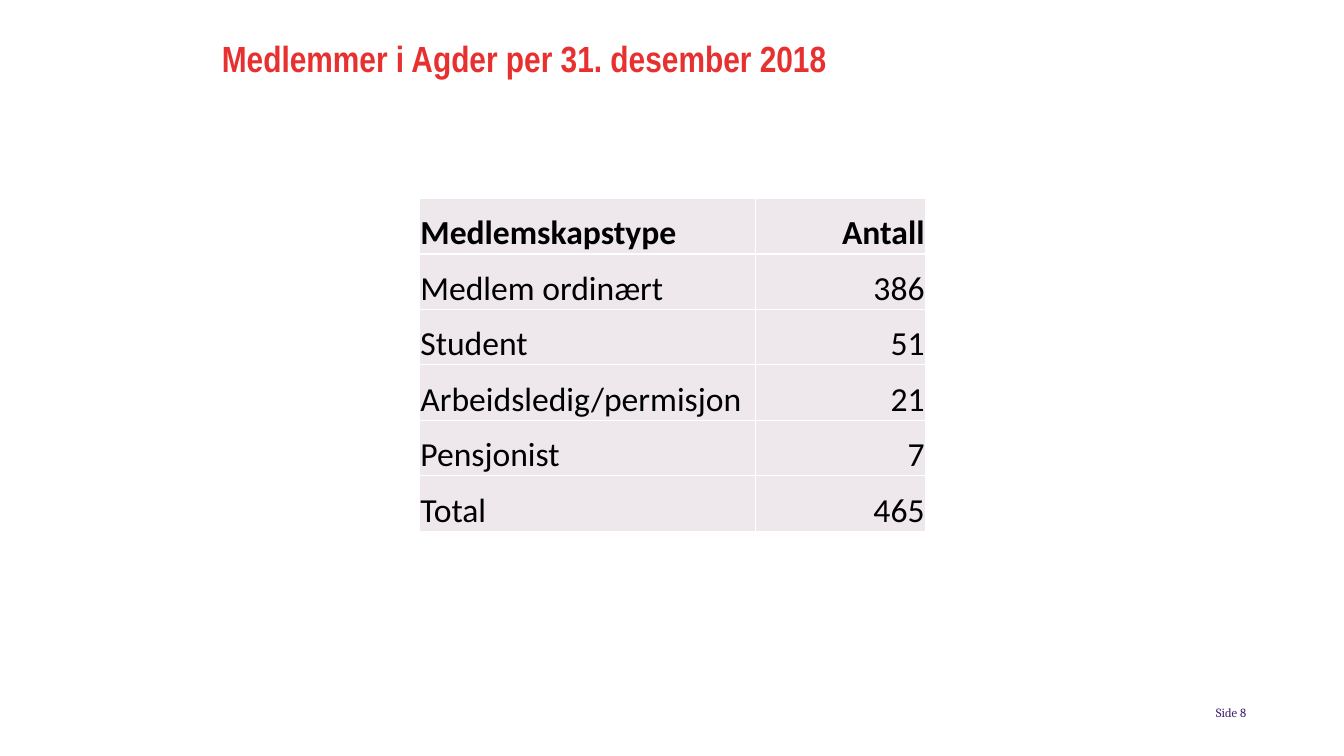
import lxml.etree
import pptx
import pptx.dml.color
import pptx.enum.text
import pptx.oxml.ns
import pptx.util

TITLE = "Medlemmer i Agder per 31. desember 2018"
PAGE_LABEL = "Side 8"
MEMBERS = [
    ("Medlemskapstype", "Antall"),
    ("Medlem ordinært", "386"),
    ("Student", "51"),
    ("Arbeidsledig/permisjon", "21"),
    ("Pensjonist", "7"),
    ("Total", "465"),
]
COLUMN_WIDTHS = (3.33, 1.69)
ROW_HEIGHT = 0.55
CELL_FILL = "EEE8ED"
BORDER = "FFFFFF"
TITLE_FONT = {"name": "Arial Narrow", "size": pptx.util.Pt(26), "bold": True}
LABEL_FONT = {"name": "Cambria", "size": pptx.util.Pt(9)}
TABLE_FONT = {"name": "Calibri", "size": pptx.util.Pt(24)}
ALIGN = pptx.enum.text.PP_ALIGN
ANCHOR = pptx.enum.text.MSO_ANCHOR
inches = pptx.util.Inches


def color(value):
    return pptx.dml.color.RGBColor.from_string(value)


def assign(target, values):
    for name, value in values.items():
        setattr(target, name, value)


def write(frame, text, font, shade, align):
    para = frame.paragraphs[0]
    para.alignment = align
    span = para.add_run()
    span.text = text
    assign(span.font, font)
    span.font.color.rgb = color(shade)
    return para


def margins(left, top, right, bottom):
    names = ("margin_left", "margin_top", "margin_right", "margin_bottom")
    return dict(zip(names, map(inches, (left, top, right, bottom))))


def add_borders(cell):
    properties = cell._tc.get_or_add_tcPr()
    qn = pptx.oxml.ns.qn
    for side in ("a:lnL", "a:lnR", "a:lnT", "a:lnB"):
        line = lxml.etree.SubElement(properties, qn(side), w=str(pptx.util.Pt(1)))
        fill = lxml.etree.SubElement(line, qn("a:solidFill"))
        lxml.etree.SubElement(fill, qn("a:srgbClr"), val=BORDER)


def add_title(page):
    title = page.shapes.title
    assign(title, dict(left=inches(2.2), top=inches(0.39), width=inches(7.48), height=inches(0.81)))
    frame = title.text_frame
    assign(frame, margins(0, 0, 0, 0))
    assign(frame, {"word_wrap": True, "vertical_anchor": ANCHOR.TOP,
                   "auto_size": pptx.enum.text.MSO_AUTO_SIZE.NONE})
    para = write(frame, TITLE, TITLE_FONT, "E73130", ALIGN.LEFT)
    para.line_spacing = pptx.util.Pt(29)


def add_page_label(page):
    box = page.shapes.add_textbox(*map(inches, (9.36, 6.99, 3, 0.15)))
    assign(box.text_frame, margins(0, 0, 0, 0))
    assign(box.text_frame, {"word_wrap": True, "vertical_anchor": ANCHOR.MIDDLE})
    write(box.text_frame, PAGE_LABEL, LABEL_FONT, "3F1F71", ALIGN.RIGHT)


def add_members(page):
    size = (sum(COLUMN_WIDTHS), ROW_HEIGHT * len(MEMBERS))
    table = page.shapes.add_table(
        len(MEMBERS), len(COLUMN_WIDTHS), *map(inches, (4.16, 1.97, *size))).table
    for column, width in zip(table.columns, COLUMN_WIDTHS):
        column.width = inches(width)
    for row_index, values in enumerate(MEMBERS):
        table.rows[row_index].height = inches(ROW_HEIGHT)
        font = {**TABLE_FONT, "bold": row_index == 0}
        for column_index, (text, align) in enumerate(zip(values, (ALIGN.LEFT, ALIGN.RIGHT))):
            cell = table.cell(row_index, column_index)
            assign(cell, margins(0.01, 0.01, 0.01, 0))
            cell.vertical_anchor = ANCHOR.BOTTOM
            add_borders(cell)
            cell.fill.solid()
            cell.fill.fore_color.rgb = color(CELL_FILL)
            write(cell.text_frame, text, font, "000000", align)


def main():
    deck = pptx.Presentation()
    assign(deck, {"slide_width": inches(13.33), "slide_height": inches(7.5)})
    page = deck.slides.add_slide(deck.slide_layouts[5])
    add_title(page)
    add_page_label(page)
    add_members(page)
    deck.save("out.pptx")


if __name__ == "__main__":
    main()
